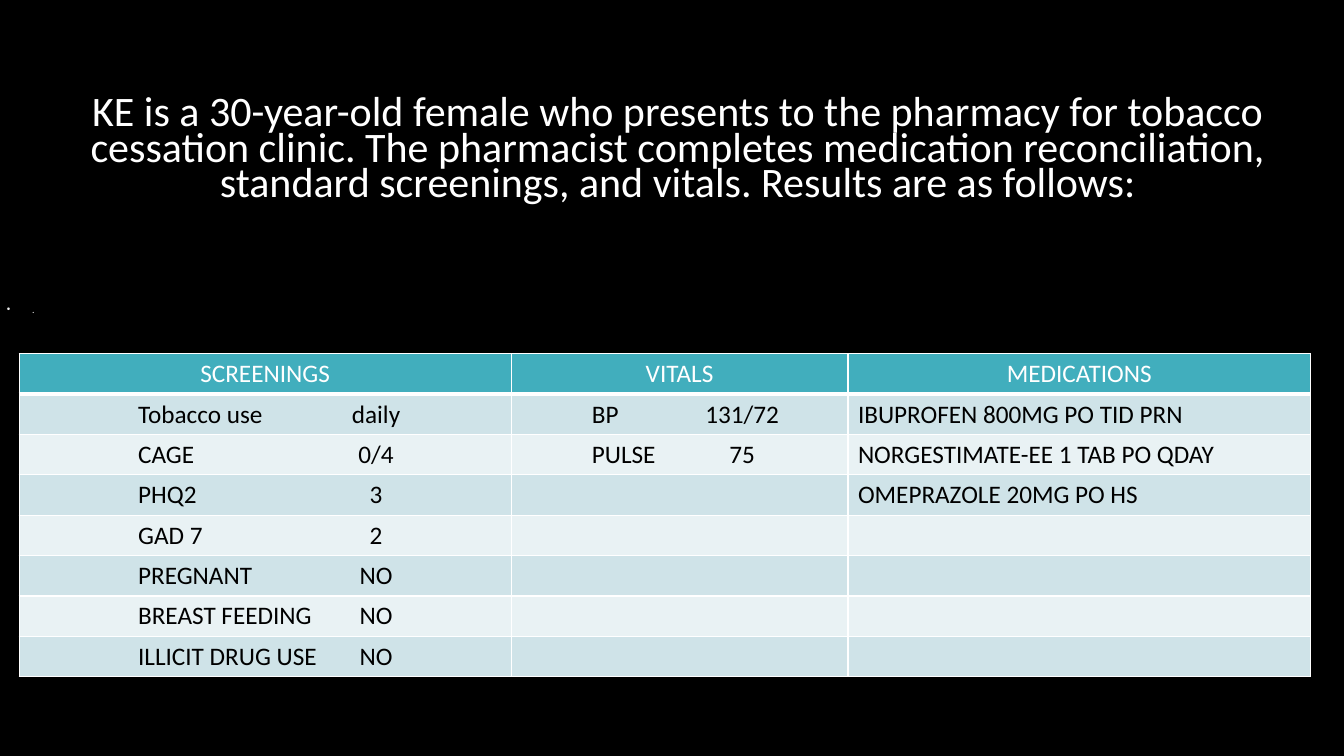
from dataclasses import dataclass

from lxml.etree import SubElement
from pptx import Presentation
from pptx.dml.color import RGBColor
from pptx.enum.text import MSO_ANCHOR, PP_ALIGN as Align
from pptx.oxml.ns import qn
from pptx.util import Inches, Pt


@dataclass(frozen=True)
class Theme:
    """Colours, font and type sizes of the slide."""
    font: str = "Calibri"
    background: str = "000000"
    light: str = "FFFFFF"
    dark: str = "000000"
    dot: str = "EDEDED"
    header: str = "41AEBD"
    bands: tuple = ("CFE3E8", "E9F2F4")
    intro_size: int = 30
    dot_size: int = 7
    table_size: int = 18


THEME = Theme()

INTRO = (
    "KE is a 30-year-old female who presents to the pharmacy for tobacco "
    "cessation clinic. The pharmacist completes medication reconciliation, "
    "standard screenings, and vitals. Results are as follows:"
)
HEADERS = ("SCREENINGS", "VITALS", "MEDICATIONS")
COLUMN_WIDTHS = (4.88, 3.34, 4.59)
CELL_INDENTS = (1.18, 0.8, 0.1)
VALUE_CENTRES = (2.36, 1.49, None)
RESULTS = (
    ("Tobacco use\tdaily", "BP\t131/72", "IBUPROFEN 800MG PO TID PRN"),
    ("CAGE\t0/4", "PULSE\t75", "NORGESTIMATE-EE 1 TAB PO QDAY"),
    ("PHQ2\t3", "", "OMEPRAZOLE 20MG PO HS"),
    ("GAD 7\t2", "", ""),
    ("PREGNANT\tNO", "", ""),
    ("BREAST FEEDING\tNO", "", ""),
    ("ILLICIT DRUG USE\tNO", "", ""),
)


def add_run(paragraph, text, size, color):
    """Add one styled run to a paragraph."""
    run = paragraph.add_run()
    run.text = text
    run.font.name = THEME.font
    run.font.size = Pt(size)
    run.font.bold = False
    run.font.color.rgb = RGBColor.from_string(color)


def set_indent(paragraph, margin, first_line):
    """Set the left margin and first-line indent in inches."""
    properties = paragraph._p.get_or_add_pPr()
    properties.set("marL", str(Inches(margin)))
    properties.set("indent", str(Inches(first_line)))
    return properties


def add_centre_tab(paragraph, position):
    """Add a centred tab stop at a position in inches."""
    tabs = SubElement(paragraph._p.get_or_add_pPr(), qn("a:tabLst"))
    SubElement(tabs, qn("a:tab"), pos=str(Inches(position)), algn="ctr")


def add_introduction(slide, left, top, width, height):
    """Place the case introduction and the small bullet below it."""
    shape = slide.shapes.add_textbox(
        Inches(left), Inches(top), Inches(width), Inches(height))
    frame = shape.text_frame
    frame.word_wrap = True
    frame.vertical_anchor = MSO_ANCHOR.TOP
    frame.margin_top = Inches(0.71)

    introduction = frame.paragraphs[0]
    set_indent(introduction, 0.11, 0)
    introduction.alignment = Align.CENTER
    introduction.line_spacing = 0.7
    add_run(introduction, INTRO, THEME.intro_size, THEME.light)

    bullet = frame.add_paragraph()
    properties = set_indent(bullet, 0.25, -0.25)
    SubElement(properties, qn("a:buFont"), typeface="Arial")
    SubElement(properties, qn("a:buChar"), char="•")
    bullet.line_spacing = 0.7
    bullet.space_before = Pt(73)
    add_run(bullet, ".", THEME.dot_size, THEME.dot)


def style_cell(cell, fill, bottom=1):
    """Give a cell white borders and a plain fill."""
    properties = cell._tc.get_or_add_tcPr()
    for side, width in (("L", 1), ("R", 1), ("T", 1), ("B", bottom)):
        line = SubElement(properties, qn(f"a:ln{side}"), w=str(Pt(width)))
        paint = SubElement(line, qn("a:solidFill"))
        SubElement(paint, qn("a:srgbClr"), val=THEME.light)
    cell.fill.solid()
    cell.fill.fore_color.rgb = RGBColor.from_string(fill)


def add_results_table(slide, left, top, width, height):
    """Place the table of screenings, vitals and medications."""
    table = slide.shapes.add_table(
        len(RESULTS) + 1, len(HEADERS),
        Inches(left), Inches(top), Inches(width), Inches(height)).table
    table.first_row = False
    table.horz_banding = False
    for column, column_width in zip(table.columns, COLUMN_WIDTHS):
        column.width = Inches(column_width)

    for index, header in enumerate(HEADERS):
        cell = table.cell(0, index)
        style_cell(cell, THEME.header, bottom=3)
        paragraph = cell.text_frame.paragraphs[0]
        paragraph.alignment = Align.CENTER
        add_run(paragraph, header, THEME.table_size, THEME.light)

    for row, results in enumerate(RESULTS):
        for index, text in enumerate(results):
            cell = table.cell(row + 1, index)
            style_cell(cell, THEME.bands[row % 2])
            if not text:
                continue
            cell.margin_left = Inches(CELL_INDENTS[index])
            paragraph = cell.text_frame.paragraphs[0]
            if VALUE_CENTRES[index]:
                add_centre_tab(paragraph, VALUE_CENTRES[index])
            add_run(paragraph, text, THEME.table_size, THEME.dark)


def main():
    """Build and save the patient case slide."""
    presentation = Presentation()
    presentation.slide_width = Inches(13.33)
    presentation.slide_height = Inches(7.5)
    slide = presentation.slides.add_slide(presentation.slide_layouts[6])
    slide.background.fill.solid()
    slide.background.fill.fore_color.rgb = RGBColor.from_string(THEME.background)
    add_introduction(slide, -0.03, 0.27, 13.4, 2.53)
    add_results_table(slide, 0.19, 3.51, sum(COLUMN_WIDTHS), 3.2)
    presentation.save("out.pptx")


if __name__ == "__main__":
    main()
